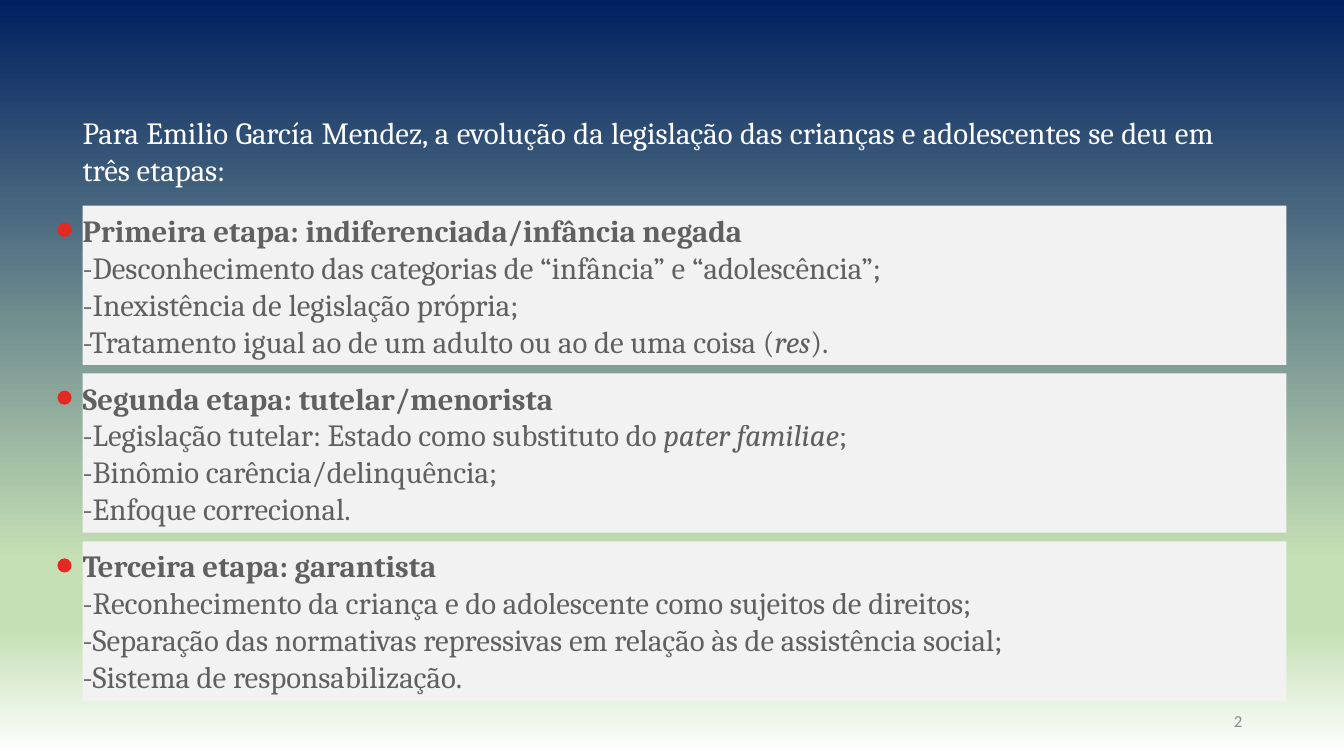
from copy import deepcopy
from lxml.etree import SubElement
from pptx import Presentation
from pptx.dml.color import RGBColor
from pptx.enum.shapes import MSO_SHAPE as Shape
from pptx.enum.text import MSO_ANCHOR as Anchor, PP_ALIGN as Align
from pptx.oxml.ns import qn
from pptx.util import Inches, Pt

INTRO = ("Para Emilio García Mendez, a evolução da legislação das crianças "
         "e adolescentes se deu em três etapas:")
# Each line is a list of pieces; every second piece is italic.
STAGES = [
    ("Primeira etapa: indiferenciada/infância negada", [
        ["-Desconhecimento das categorias de “infância” e “adolescência”;"],
        ["-Inexistência de legislação própria;"],
        ["-Tratamento igual ao de um adulto ou ao de uma coisa (", "res", ")."]]),
    ("Segunda etapa: tutelar/menorista", [
        ["-Legislação tutelar: Estado como substituto do ", "pater familiae", ";"],
        ["-Binômio carência/delinquência;"],
        ["-Enfoque correcional."]]),
    ("Terceira etapa: garantista", [
        ["-Reconhecimento da criança e do adolescente como sujeitos de direitos;"],
        ["-Separação das normativas repressivas em relação às de assistência social;"],
        ["-Sistema de responsabilização."]]),
]
NUMBER = "2"

NAVY = RGBColor(0x00, 0x20, 0x60)
GREEN = RGBColor(0xC5, 0xE0, 0xB4)
WHITE = RGBColor(0xFF, 0xFF, 0xFF)
BLACK = RGBColor(0x00, 0x00, 0x00)
PALE = RGBColor(0xF2, 0xF2, 0xF2)
RED = RGBColor(0xE2, 0x29, 0x22)
GRAY = RGBColor(0x8C, 0x8C, 0x8C)
STOPS = [(0, NAVY), (0.74, GREEN), (0.83, GREEN), (1, WHITE)]

LEFT, TOP, WIDTH, HEIGHT, STEP = 0.82, 2.04, 11.94, 1.58, 1.665
DOT_X, DOT_DY, DOT = 0.57, 0.17, 0.14


def paint_back(slide):
    fill = slide.background.fill
    fill.gradient()
    fill.gradient_angle = 270
    stops = slide.element.find(".//" + qn("a:gsLst"))
    while len(stops) < len(STOPS):
        stops.append(deepcopy(stops[0]))
    for stop, (pos, color) in zip(fill.gradient_stops, STOPS):
        stop.position = pos
        stop.color.rgb = color


def add_block(slide, kind, box, color):
    shape = slide.shapes.add_shape(kind, *map(Inches, box))
    shape.shadow.inherit = False
    shape.fill.solid()
    shape.fill.fore_color.rgb = color
    shape.line.fill.background()
    return shape


def set_frame(frame, anchor):
    frame.word_wrap = True
    frame.margin_left = frame.margin_right = 0
    frame.vertical_anchor = anchor


def style(para, color, size=22, name="Cambria", align=Align.JUSTIFY):
    para.alignment = align
    font = para.font
    font.size, font.name = Pt(size), name
    font.color.rgb = color
    return font


def fade(para, percent):
    """Set the opacity of the paragraph's text colour."""
    for color in para.font.fill.fore_color and para._p.iter(qn("a:srgbClr")):
        SubElement(color, qn("a:alpha"), val=str(percent * 1000))


def add_stage(slide, top, title, lines):
    box = add_block(slide, Shape.RECTANGLE, (LEFT, top, WIDTH, HEIGHT), PALE)
    frame = box.text_frame
    set_frame(frame, Anchor.MIDDLE)
    for row, parts in enumerate([[title]] + lines):
        para = frame.add_paragraph() if row else frame.paragraphs[0]
        style(para, BLACK).bold = row == 0
        fade(para, 60)
        for spot, part in enumerate(parts):
            run = para.add_run()
            run.text = part
            if spot % 2:
                run.font.italic = True
    add_block(slide, Shape.OVAL, (DOT_X, top + DOT_DY, DOT, DOT), RED)


def add_label(slide, box, text, anchor):
    frame = slide.shapes.add_textbox(*map(Inches, box)).text_frame
    frame.word_wrap = True
    frame.vertical_anchor = anchor
    frame.text = text
    return frame


def main():
    deck = Presentation()
    deck.slide_width, deck.slide_height = Inches(13.33), Inches(7.5)
    slide = deck.slides.add_slide(deck.slide_layouts[6])
    paint_back(slide)
    intro = add_label(slide, (LEFT, 1.08, 11.22, 0.84), INTRO, Anchor.TOP)
    set_frame(intro, Anchor.TOP)
    style(intro.paragraphs[0], WHITE)
    for i, (title, lines) in enumerate(STAGES):
        add_stage(slide, TOP + i * STEP, title, lines)
    page = add_label(slide, (9.42, 6.95, 3, 0.4), NUMBER, Anchor.MIDDLE)
    style(page.paragraphs[0], GRAY, 12, "Calibri", Align.RIGHT)
    deck.save("out.pptx")


if __name__ == "__main__":
    main()
